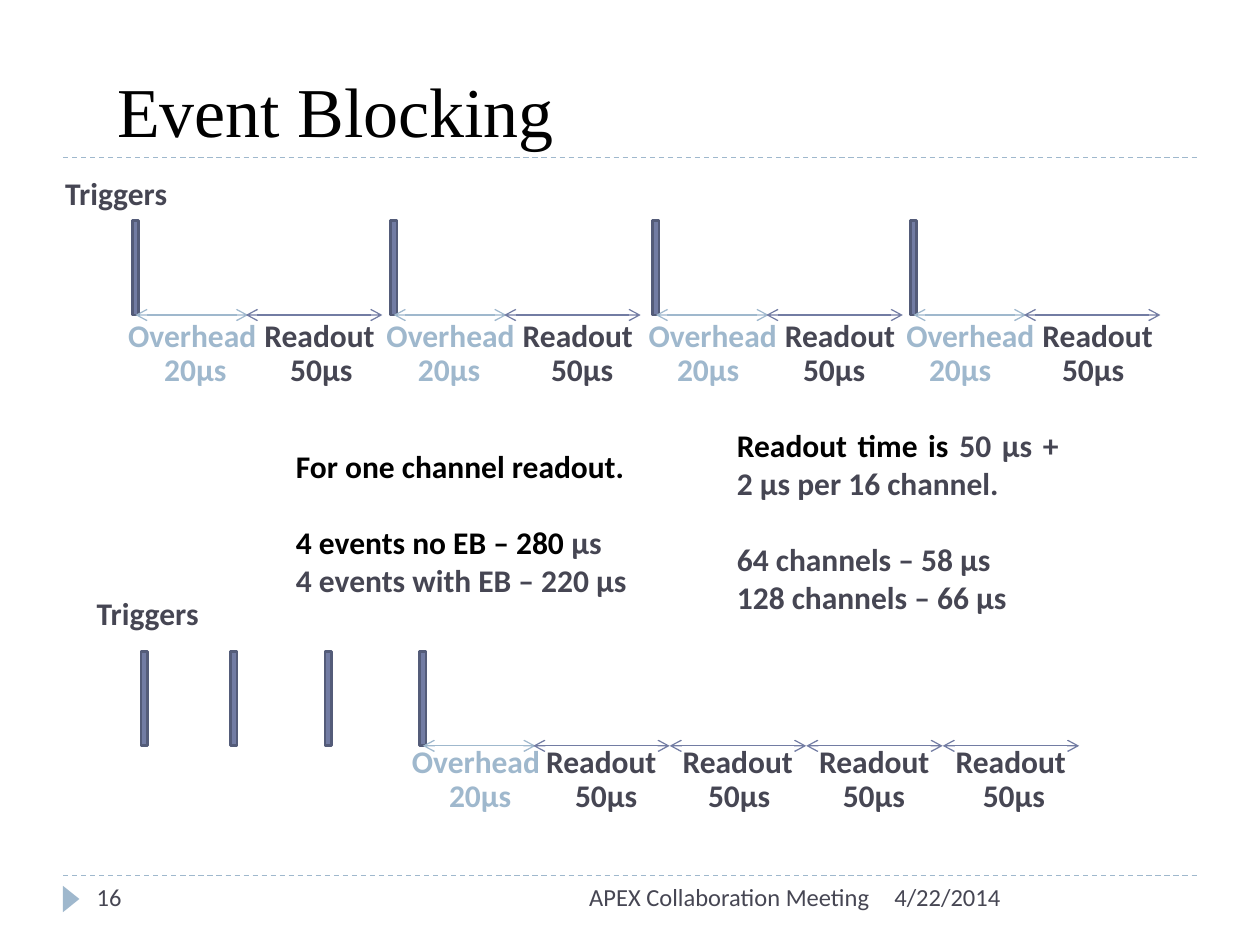
"""Build the Event Blocking timing slide."""
import pptx
import pptx.chart.data
import pptx.dml.color
import pptx.enum.dml
import pptx.enum.shapes
import pptx.enum.text
import pptx.oxml.ns
import pptx.util
from lxml import etree

Pt = pptx.util.Pt
SHAPES = pptx.enum.shapes.MSO_SHAPE
ALIGN = pptx.enum.text.PP_ALIGN
ANCHOR = pptx.enum.text.MSO_ANCHOR
AUTO_SIZE = pptx.enum.text.MSO_AUTO_SIZE

THEME = {
    "black": "000000", "ink": "464653", "overhead": "9FB8CD",
    "bar": "727CA3", "bar_edge": "545C79",
    "body_font": "Calibri", "title_font": "Times New Roman",
    "title": 40, "body": 18, "footer": 14,
}
BAR_WIDTH, BAR_HEIGHT = 3.6, 54
OVERHEAD_LENGTH, READOUT_LENGTH = 64.4, 78
READOUT_OFFSET = 64.9
INSET = 7.2
LABEL_HEIGHT = 28.8

TIMELINES = [
    {
        "bars": [75.6, 223.2, 373, 520.2], "top": 126, "busy": [0, 1, 2, 3],
        "readouts": 1, "triggers": (30.2, 95.8), "overhead_shift": -9.4,
        "readout_shift": 3.5, "label_top": 177.1,
        "times": (82.8, 196.6, 576),
        "stops": [4, 76, 149, 225, 297, 369, 441, 517],
    },
    {
        "bars": [80.6, 131.8, 185.8, 239.8], "top": 372.2, "busy": [3],
        "readouts": 4, "triggers": (48.2, 336.2), "overhead_shift": -11.5,
        "readout_shift": 0.3, "label_top": 420.5,
        "times": (245.5, 439.9, 368.6),
        "stops": [4, 76, 152, 229, 309],
    },
]
NOTES = [
    ((162, 252, 212.4, 94.3), [
        (0, [("For one channel readout.", "black")]),
        (22, [("4 events no EB – 280 ", "black"), ("µs", "ink")]),
        (0, [("4 events with EB – 220 µs", "ink")]),
    ]),
    ((414, 239.8, 198, 116.6), [
        (0, [("Readout time is ", "black"), ("50 µs + 2 µs per 16 channel.", "ink")]),
        (22, [("64 channels – 58 µs", "ink")]),
        (0, [("128 channels – 66 µs", "ink")]),
    ]),
]
FOOTERS = [
    ("16", 48.2, 156.2, ALIGN.LEFT),
    ("4/22/2014", 504, 180, ALIGN.LEFT),
    ("APEX Collaboration Meeting", 228.2, 275.8, ALIGN.RIGHT),
]
RULES = [90, 500.4]


def color(name):
    return pptx.dml.color.RGBColor.from_string(THEME[name])


def add_run(paragraph, text, ink, size="body", font="body_font", bold=True):
    run = paragraph.add_run()
    run.text = text
    run.font.name = THEME[font]
    run.font.size = Pt(THEME[size])
    run.font.bold = bold
    run.font.color.rgb = color(ink)


def add_frame(slide, left, top, width, height, wrap=True):
    box = slide.shapes.add_textbox(Pt(left), Pt(top), Pt(width), Pt(height))
    box.text_frame.word_wrap = wrap
    return box.text_frame


def add_label(slide, text, left, top, width, ink):
    frame = add_frame(slide, left, top, width, LABEL_HEIGHT, wrap=False)
    frame.auto_size = AUTO_SIZE.SHAPE_TO_FIT_TEXT
    add_run(frame.paragraphs[0], text, ink)


def add_shape(slide, kind, left, top, width, height, fill):
    shape = slide.shapes.add_shape(kind, Pt(left), Pt(top), Pt(width), Pt(height))
    shape.shadow.inherit = False
    shape.fill.solid()
    shape.fill.fore_color.rgb = color(fill)
    shape.line.fill.background()
    return shape


def add_bar(slide, left, top):
    bar = add_shape(slide, SHAPES.RECTANGLE, left, top, BAR_WIDTH, BAR_HEIGHT, "bar")
    bar.line.color.rgb = color("bar_edge")
    bar.line.width = Pt(1.5)
    return bar


def add_line(slide, start, end, y, ink):
    line = slide.shapes.add_connector(
        pptx.enum.shapes.MSO_CONNECTOR.STRAIGHT, Pt(start), Pt(y), Pt(end), Pt(y))
    line.line.color.rgb = color(ink)
    line.line.width = Pt(0.75)
    etree.SubElement(line._element.spPr, pptx.oxml.ns.qn("a:effectLst"))
    return line


def add_arrow(slide, start, length, y, ink):
    arrow = add_line(slide, start, start + length, y, ink)
    outline = arrow.line._get_or_add_ln()
    for end in ("a:headEnd", "a:tailEnd"):
        etree.SubElement(outline, pptx.oxml.ns.qn(end), type="arrow")
    return arrow


def add_times(slide, timeline):
    left, top, width = timeline["times"]
    paragraph = add_frame(slide, left, top, width, LABEL_HEIGHT).paragraphs[0]
    tabs = etree.SubElement(
        paragraph._p.get_or_add_pPr(), pptx.oxml.ns.qn("a:tabLst"))
    for stop in timeline["stops"]:
        etree.SubElement(
            tabs, pptx.oxml.ns.qn("a:tab"), pos=str(int(Pt(stop))), algn="l")
    for _ in timeline["busy"]:
        add_run(paragraph, "\t20µs", "overhead")
        for _ in range(timeline["readouts"]):
            add_run(paragraph, "\t50µs", "ink")


def add_timeline(slide, timeline):
    top, label_top = timeline["top"], timeline["label_top"]
    axis = top + BAR_HEIGHT
    bars = [add_bar(slide, left, top) for left in timeline["bars"]]
    add_label(slide, "Triggers", *timeline["triggers"], 72.7, "ink")
    for index in timeline["busy"]:
        left = timeline["bars"][index]
        arrow = add_arrow(
            slide, left + BAR_WIDTH / 2, OVERHEAD_LENGTH, axis, "overhead")
        arrow.begin_connect(bars[index], 2)
        add_label(slide, "Overhead", left + timeline["overhead_shift"],
                  label_top, 88.6, "overhead")
        for step in range(timeline["readouts"]):
            start = left + READOUT_OFFSET + step * READOUT_LENGTH
            add_arrow(slide, start, READOUT_LENGTH, axis, "bar")
            add_label(slide, "Readout", start + timeline["readout_shift"],
                      label_top, 77.8, "ink")
    add_times(slide, timeline)


def add_note(slide, place, lines):
    frame = add_frame(slide, *place)
    for index, (gap, runs) in enumerate(lines):
        paragraph = frame.add_paragraph() if index else frame.paragraphs[0]
        paragraph.alignment = ALIGN.JUSTIFY
        paragraph.space_before = Pt(gap)
        for text, ink in runs:
            add_run(paragraph, text, ink)


def main():
    presentation = pptx.Presentation()
    presentation.slide_width, presentation.slide_height = Pt(720), Pt(540)
    slide = presentation.slides.add_slide(presentation.slide_layouts[6])
    for y in RULES:
        rule = add_line(slide, 36, 684, y, "overhead")
        rule.line.dash_style = pptx.enum.dml.MSO_LINE.DASH
    marker = add_shape(
        slide, SHAPES.ISOSCELES_TRIANGLE, 33.1, 509, 15.1, 9.4, "overhead")
    marker.rotation = 90
    title = add_frame(slide, 59.8, 0, 648, 90)
    title.vertical_anchor = ANCHOR.BOTTOM
    add_run(title.paragraphs[0], "Event Blocking", "black", "title", "title_font", False)
    for timeline in TIMELINES:
        add_timeline(slide, timeline)
    for place, lines in NOTES:
        add_note(slide, place, lines)
    for text, left, width, alignment in FOOTERS:
        paragraph = add_frame(slide, left, 500.4, width, LABEL_HEIGHT).paragraphs[0]
        paragraph.alignment = alignment
        add_run(paragraph, text, "ink", "footer", bold=False)
    presentation.save("out.pptx")


if __name__ == "__main__":
    main()
